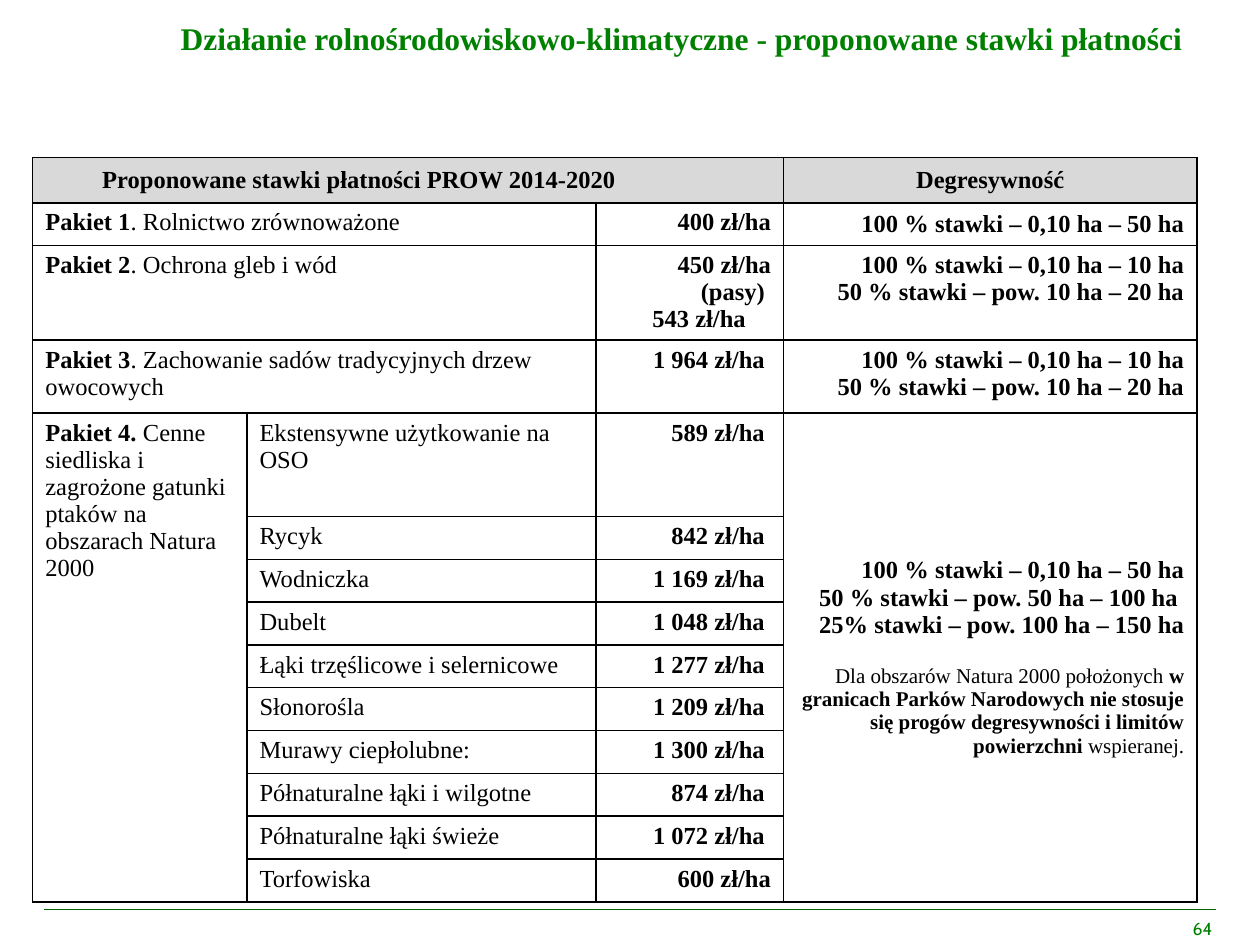
from dataclasses import dataclass

from lxml import etree
from pptx import Presentation
from pptx.dml.color import RGBColor
from pptx.enum.shapes import MSO_CONNECTOR
from pptx.enum.text import MSO_ANCHOR, PP_ALIGN
from pptx.oxml.ns import qn
from pptx.util import Emu, Inches, Pt

LEFT, CENTER, RIGHT = PP_ALIGN.LEFT, PP_ALIGN.CENTER, PP_ALIGN.RIGHT
TOP, MIDDLE = MSO_ANCHOR.TOP, MSO_ANCHOR.MIDDLE
STRAIGHT = MSO_CONNECTOR.STRAIGHT
SERIF, SANS = "Times New Roman", "Cabin"
BLACK, WHITE, GREY, GREEN, DARK_GREEN = "000000", "FFFFFF", "D9D9D9", "008000", "006600"
COLUMN_WIDTHS = (1.7, 2.77, 1.49, 3.28)
ROW_HEIGHTS = (0.36, 0.34, 0.75, 0.58, 0.82) + (0.34,) * 9
LAST_ROW = len(ROW_HEIGHTS) - 1


@dataclass(frozen=True)
class Span:
    text: str
    bold: bool = False


@dataclass(frozen=True)
class Para:
    spans: tuple[Span, ...]
    size: int = 14
    space_before: int = 0
    right_indent: float = 0


@dataclass(frozen=True)
class Entry:
    row: int
    column: int
    paras: tuple[Para, ...]
    align: PP_ALIGN = LEFT
    anchor: MSO_ANCHOR = TOP
    fill: str = WHITE
    rows: int = 1
    columns: int = 1
    right_margin: float = 0.1


@dataclass(frozen=True)
class Label:
    text: str
    left: float
    top: float
    width: float
    height: float
    size: int
    font: str
    align: PP_ALIGN
    anchor: MSO_ANCHOR
    bold: bool


def colour(value: str) -> RGBColor:
    return RGBColor.from_string(value)


def bold_paras(*lines: str) -> tuple[Para, ...]:
    return tuple(Para((Span(line, True),)) for line in lines)


def plain(text: str) -> tuple[Para, ...]:
    return (Para((Span(text),)),)


def package(name: str, description: str) -> tuple[Para, ...]:
    return (Para((Span(name, True), Span(description))),)


def style(font, size: int, face: str, tint: str, bold: bool) -> None:
    font.size, font.name, font.bold = Pt(size), face, bold
    font.color.rgb = colour(tint)


def draw_borders(cell) -> None:
    properties = cell._tc.get_or_add_tcPr()
    for index, side in enumerate(("a:lnL", "a:lnR", "a:lnT", "a:lnB")):
        border = etree.Element(qn(side), w=str(Pt(1)))
        fill = etree.SubElement(border, qn("a:solidFill"))
        etree.SubElement(fill, qn("a:srgbClr"), val=BLACK)
        properties.insert(index, border)


def fill_entry(table, entry: Entry) -> None:
    cell = table.cell(entry.row, entry.column)
    if entry.rows * entry.columns > 1:
        cell.merge(table.cell(entry.row + entry.rows - 1, entry.column + entry.columns - 1))
    cell.fill.solid()
    cell.fill.fore_color.rgb = colour(entry.fill)
    cell.vertical_anchor = entry.anchor
    cell.margin_right = Inches(entry.right_margin)
    frame = cell.text_frame
    for index, content in enumerate(entry.paras):
        para = frame.add_paragraph() if index else frame.paragraphs[0]
        para.alignment = entry.align
        if content.space_before:
            para.space_before = Pt(content.space_before)
        if content.right_indent:
            para._p.get_or_add_pPr().set("marR", str(Inches(content.right_indent)))
        for span in content.spans:
            run = para.add_run()
            run.text = span.text
            style(run.font, content.size, SERIF, BLACK, span.bold)


def draw_table(slide, entries: list[Entry]) -> None:
    frame = slide.shapes.add_table(
        len(ROW_HEIGHTS), len(COLUMN_WIDTHS), Inches(0.26), Inches(1.25),
        Inches(sum(COLUMN_WIDTHS)), Inches(sum(ROW_HEIGHTS)))
    table = frame.table
    table.first_row = table.horz_banding = False
    for column, width in zip(table.columns, COLUMN_WIDTHS):
        column.width = Inches(width)
    for row, height in zip(table.rows, ROW_HEIGHTS):
        row.height = Inches(height)
    for entry in entries:
        fill_entry(table, entry)
    for cell in table.iter_cells():
        draw_borders(cell)


def draw_label(deck, slide, label: Label) -> None:
    width, height = deck.slide_width, deck.slide_height
    box = slide.shapes.add_textbox(
        Emu(round(label.left * width)), Emu(round(label.top * height)),
        Emu(round(label.width * width)), Emu(round(label.height * height)))
    frame = box.text_frame
    frame.word_wrap = True
    frame.vertical_anchor = label.anchor
    frame.text = label.text
    para = frame.paragraphs[0]
    para.alignment = label.align
    style(para.runs[0].font, label.size, label.font, GREEN, label.bold)


def draw_footer_line(slide) -> None:
    line = slide.shapes.add_connector(
        STRAIGHT, Inches(0.35), Inches(7.22), Inches(9.65), Inches(7.22))
    line.line.color.rgb = colour(DARK_GREEN)
    line.line.width = Pt(0.25)
    etree.SubElement(line._element.spPr, qn("a:effectLst"))


def table_entries() -> list[Entry]:
    packages = (
        ("Pakiet 1", ". Rolnictwo zrównoważone"),
        ("Pakiet 2", ". Ochrona gleb i wód"),
        ("Pakiet 3", ". Zachowanie sadów tradycyjnych drzew owocowych"),
    )
    habitats = (
        "Ekstensywne użytkowanie na OSO", "Rycyk", "Wodniczka", "Dubelt",
        "Łąki trzęślicowe i selernicowe", "Słonorośla", "Murawy ciepłolubne:",
        "Półnaturalne łąki i wilgotne", "Półnaturalne łąki świeże", "Torfowiska",
    )
    rates = (
        bold_paras("400 zł/ha"),
        bold_paras("450 zł/ha (pasy) ") + (Para((Span("543 zł/ha", True),), right_indent=0.2),),
        *(bold_paras(f"{rate} zł/ha ") for rate in (
            "1 964", "589", "842", "1 169", "1 048", "1 277", "1 209", "1 300", "874", "1 072")),
        bold_paras("600 zł/ha"),
    )
    small_farm = bold_paras("100 % stawki – 0,10 ha – 10 ha", "50 % stawki – pow. 10 ha – 20 ha")
    natura = bold_paras(
        "100 % stawki – 0,10 ha – 50 ha",
        "50 % stawki – pow. 50 ha – 100 ha ",
        "25% stawki – pow. 100 ha – 150 ha",
    ) + (Para((
        Span("Dla obszarów Natura 2000 położonych "),
        Span("w granicach Parków Narodowych nie stosuje się progów degresywności "
             "i limitów powierzchni ", True),
        Span("wspieranej."),
    ), size=12, space_before=15),)
    return [
        Entry(0, 0, bold_paras("Proponowane stawki płatności PROW 2014-2020"), CENTER, MIDDLE,
              GREY, columns=3, right_margin=0.88),
        Entry(0, 3, bold_paras("Degresywność"), CENTER, MIDDLE, GREY),
        *(Entry(row, 0, package(*names), columns=2) for row, names in enumerate(packages, 1)),
        Entry(4, 0, package("Pakiet 4.", " Cenne siedliska i zagrożone gatunki ptaków "
                            "na obszarach Natura 2000"), rows=LAST_ROW - 3),
        *(Entry(row, 1, plain(name)) for row, name in enumerate(habitats, 4)),
        *(Entry(row, 2, rate, RIGHT) for row, rate in enumerate(rates, 1)),
        Entry(1, 3, bold_paras("100 % stawki – 0,10 ha – 50 ha"), RIGHT, MIDDLE),
        *(Entry(row, 3, small_farm, RIGHT) for row in (2, 3)),
        Entry(4, 3, natura, RIGHT, MIDDLE, rows=LAST_ROW - 3),
    ]


def main() -> None:
    deck = Presentation()
    deck.slide_width, deck.slide_height = Inches(10), Inches(7.5)
    slide = deck.slides.add_slide(deck.slide_layouts[6])
    draw_footer_line(slide)
    draw_table(slide, table_entries())
    labels = (
        Label("Działanie rolnośrodowiskowo-klimatyczne - proponowane stawki płatności",
              0.82 / 10, 0, 0.918, 0.08, 18, SERIF, CENTER, MIDDLE, True),
        Label("64", 0.68, 7.24 / 7.5, 0.292, 0.26 / 7.5, 10, SANS, RIGHT, TOP, False),
    )
    for label in labels:
        draw_label(deck, slide, label)
    deck.save("out.pptx")


if __name__ == "__main__":
    main()
